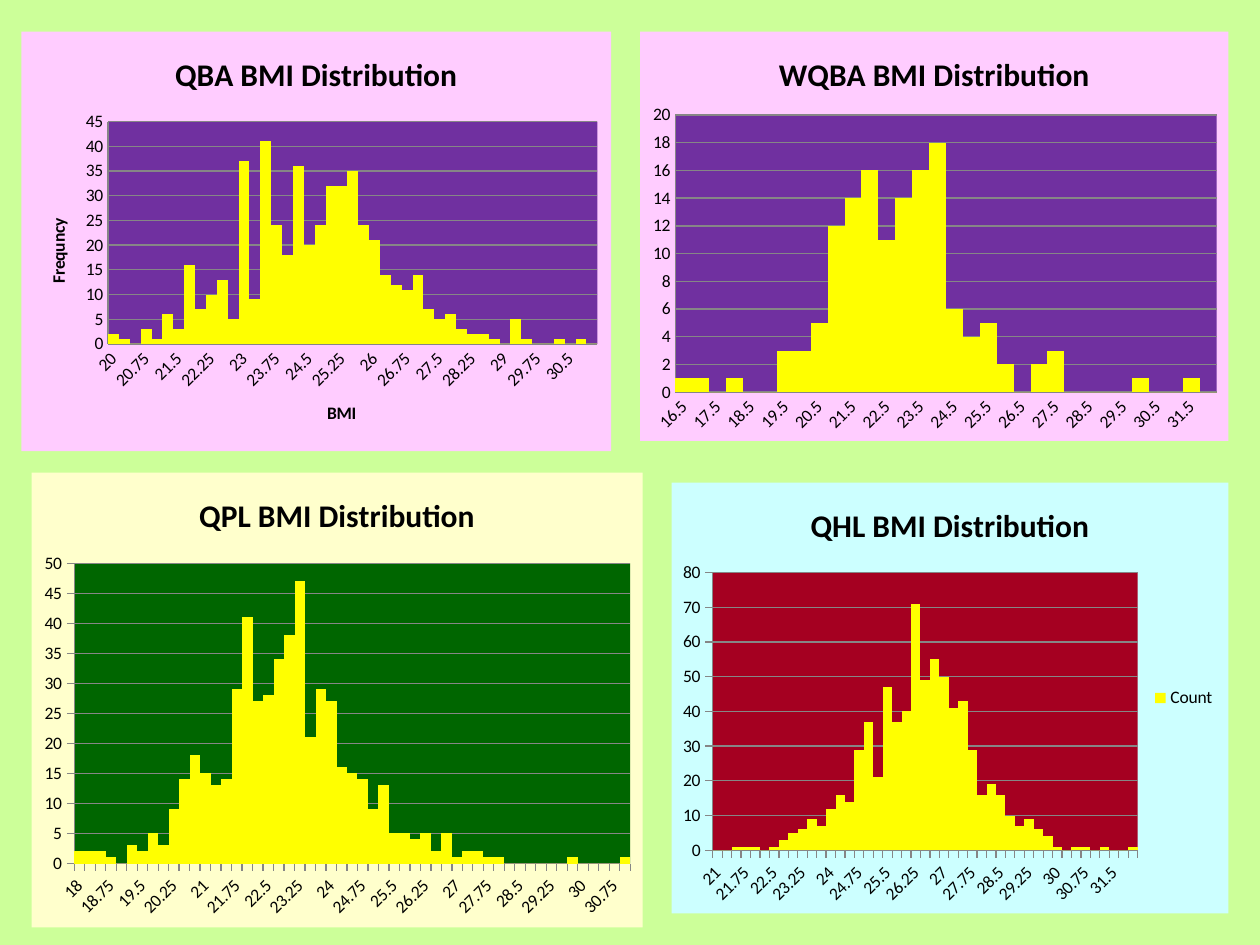
from dataclasses import dataclass

from lxml import etree
from pptx import Presentation
from pptx.chart.data import CategoryChartData
from pptx.dml.color import RGBColor
from pptx.enum.chart import XL_CHART_TYPE, XL_LEGEND_POSITION, XL_TICK_MARK
from pptx.oxml import parse_xml
from pptx.oxml.ns import nsdecls, qn
from pptx.util import Inches, Pt

COLUMNS = XL_CHART_TYPE.COLUMN_CLUSTERED
LEGEND_RIGHT = XL_LEGEND_POSITION.RIGHT
TICK_NONE, TICK_OUT = XL_TICK_MARK.NONE, XL_TICK_MARK.OUTSIDE

SLIDE_WIDTH, SLIDE_HEIGHT = Inches(10), Inches(7.5)
FONT = "Calibri"

LIME = RGBColor(0xCC, 0xFF, 0x99)
PINK = RGBColor(0xFF, 0xCC, 0xFF)
CREAM = RGBColor(0xFF, 0xFF, 0xCC)
AQUA = RGBColor(0xCC, 0xFF, 0xFF)
PURPLE = RGBColor(0x70, 0x30, 0xA0)
GREEN = RGBColor(0x00, 0x66, 0x00)
CRIMSON = RGBColor(0xA5, 0x00, 0x21)
YELLOW = RGBColor(0xFF, 0xFF, 0x00)
GREY = RGBColor(0x86, 0x86, 0x86)
BLACK = RGBColor(0, 0, 0)


@dataclass
class Histogram:
    league: str
    place: tuple        # left, top, width, height in inches
    plot: tuple         # x, y, width, height as shares of the chart
    area_color: RGBColor
    plot_color: RGBColor
    first_bin: float
    bin_width: float
    label_every: int
    top_value: int
    value_step: int
    counts: list
    tick: object = TICK_NONE
    axis_titles: tuple = ()
    series_name: str = "Series 1"
    legend: bool = False


HISTOGRAMS = [
    Histogram(
        "QBA", (0.17, 0.25, 4.68, 3.33), (0.147, 0.215, 0.83, 0.53),
        PINK, PURPLE, 20, 0.25, 3, 45, 5,
        [2, 1, 0, 3, 1, 6, 3, 16, 7, 10, 13, 5, 37, 9, 41, 24, 18, 36, 20, 24,
         32, 32, 35, 24, 21, 14, 12, 11, 14, 7, 5, 6, 3, 2, 2, 1, 0, 5, 1, 0,
         0, 1, 0, 1, 0],
        axis_titles=("BMI", "Frequncy")),
    Histogram(
        "WQBA", (5.08, 0.25, 4.67, 3.25), (0.06, 0.204, 0.92, 0.677),
        PINK, PURPLE, 16.5, 0.5, 2, 20, 2,
        [1, 1, 0, 1, 0, 0, 3, 3, 5, 12, 14, 16, 11, 14, 16, 18, 6, 4, 5, 2,
         0, 2, 3, 0, 0, 0, 0, 1, 0, 0, 1, 0]),
    Histogram(
        "QPL", (0.25, 3.75, 4.85, 3.61), (0.07, 0.2, 0.91, 0.66),
        CREAM, GREEN, 18, 0.25, 3, 50, 5,
        [2, 2, 2, 1, 0, 3, 2, 5, 3, 9, 14, 18, 15, 13, 14, 29, 41, 27, 28, 34,
         38, 47, 21, 29, 27, 16, 15, 14, 9, 13, 5, 5, 4, 5, 2, 5, 1, 2, 2, 1,
         1, 0, 0, 0, 0, 0, 0, 1, 0, 0, 0, 0, 1],
        tick=TICK_OUT),
    Histogram(
        "QHL", (5.33, 3.83, 4.42, 3.42), (0.074, 0.209, 0.763, 0.645),
        AQUA, CRIMSON, 21, 0.25, 3, 80, 10,
        [0, 0, 1, 1, 1, 0, 1, 3, 5, 6, 9, 7, 12, 16, 14, 29, 37, 21, 47, 37,
         40, 71, 49, 55, 50, 41, 43, 29, 16, 19, 16, 10, 7, 9, 6, 4, 1, 0, 1,
         1, 0, 1, 0, 0, 1],
        tick=TICK_OUT, series_name="Count", legend=True),
]


def set_title(owner, text, size):
    """Give a chart or an axis a bold title."""
    owner.has_title = True
    frame = (owner.chart_title if hasattr(owner, "chart_title")
             else owner.axis_title).text_frame
    frame.text = text
    font = frame.paragraphs[0].runs[0].font
    font.name, font.size, font.bold = FONT, Pt(size), True
    font.color.rgb = BLACK


def fill_properties(color):
    return parse_xml(
        f'<c:spPr {nsdecls("c", "a")}><a:solidFill><a:srgbClr val="{color}"/>'
        '</a:solidFill><a:ln><a:noFill/></a:ln></c:spPr>')


def fill_areas(chart, area_color, plot_color):
    chart_node = chart.element.find(qn("c:chart"))
    chart_node.addnext(fill_properties(area_color))
    chart_node.find(qn("c:plotArea")).append(fill_properties(plot_color))


def place_plot(chart, shares):
    """Fix the inner plot area at shares of the chart's size."""
    plot_area = chart.element.find(".//" + qn("c:plotArea"))
    for old in plot_area.findall(qn("c:layout")):
        plot_area.remove(old)
    layout = etree.Element(qn("c:layout"))
    manual = etree.SubElement(layout, qn("c:manualLayout"))
    settings = [("layoutTarget", "inner"), ("xMode", "edge"), ("yMode", "edge")]
    settings += zip("xywh", shares)
    for name, value in settings:
        etree.SubElement(manual, qn("c:" + name)).set("val", str(value))
    plot_area.insert(0, layout)


def slant_labels(chart, label_every):
    """Turn the category labels and show only every n-th one."""
    axis = chart.element.find(".//" + qn("c:catAx"))
    axis.find(qn("c:txPr")).find(qn("a:bodyPr")).set("rot", "-2700000")
    skip = etree.Element(qn("c:tickLblSkip"))
    skip.set("val", str(label_every))
    axis.find(qn("c:noMultiLvlLbl")).addprevious(skip)


def format_axes(chart, histogram):
    axes = (chart.category_axis, chart.value_axis)
    for axis in axes:
        axis.major_tick_mark = histogram.tick
        axis.minor_tick_mark = TICK_NONE
        axis.format.line.color.rgb = GREY
        axis.tick_labels.font.size = Pt(10)
    for axis, text in zip(axes, histogram.axis_titles):
        set_title(axis, text, 10)
    values = chart.value_axis
    values.minimum_scale, values.maximum_scale = 0, histogram.top_value
    values.major_unit = histogram.value_step
    values.has_major_gridlines = True
    values.major_gridlines.format.line.color.rgb = GREY
    slant_labels(chart, histogram.label_every)


def add_histogram(page, histogram):
    data = CategoryChartData()
    data.categories = [f"{histogram.first_bin + i * histogram.bin_width:g}"
                       for i in range(len(histogram.counts))]
    data.add_series(histogram.series_name, histogram.counts)
    chart = page.shapes.add_chart(
        COLUMNS, *map(Inches, histogram.place), data).chart
    chart.font.name, chart.font.size = FONT, Pt(10)
    chart.font.color.rgb = BLACK
    set_title(chart, f"{histogram.league} BMI Distribution", 18)

    # Touching bars in one colour
    plot = chart.plots[0]
    plot.gap_width = 0
    plot.vary_by_categories = False
    bars = plot.series[0].format
    bars.fill.solid()
    bars.fill.fore_color.rgb = YELLOW
    bars.line.fill.background()

    chart.has_legend = histogram.legend
    if histogram.legend:
        chart.legend.position = LEGEND_RIGHT
        chart.legend.include_in_layout = False
    format_axes(chart, histogram)
    place_plot(chart, histogram.plot)
    fill_areas(chart, histogram.area_color, histogram.plot_color)


def main():
    deck = Presentation()
    deck.slide_width, deck.slide_height = SLIDE_WIDTH, SLIDE_HEIGHT
    page = deck.slides.add_slide(deck.slide_layouts[6])
    page.background.fill.solid()
    page.background.fill.fore_color.rgb = LIME
    for histogram in HISTOGRAMS:
        add_histogram(page, histogram)
    deck.save("out.pptx")


if __name__ == "__main__":
    main()
